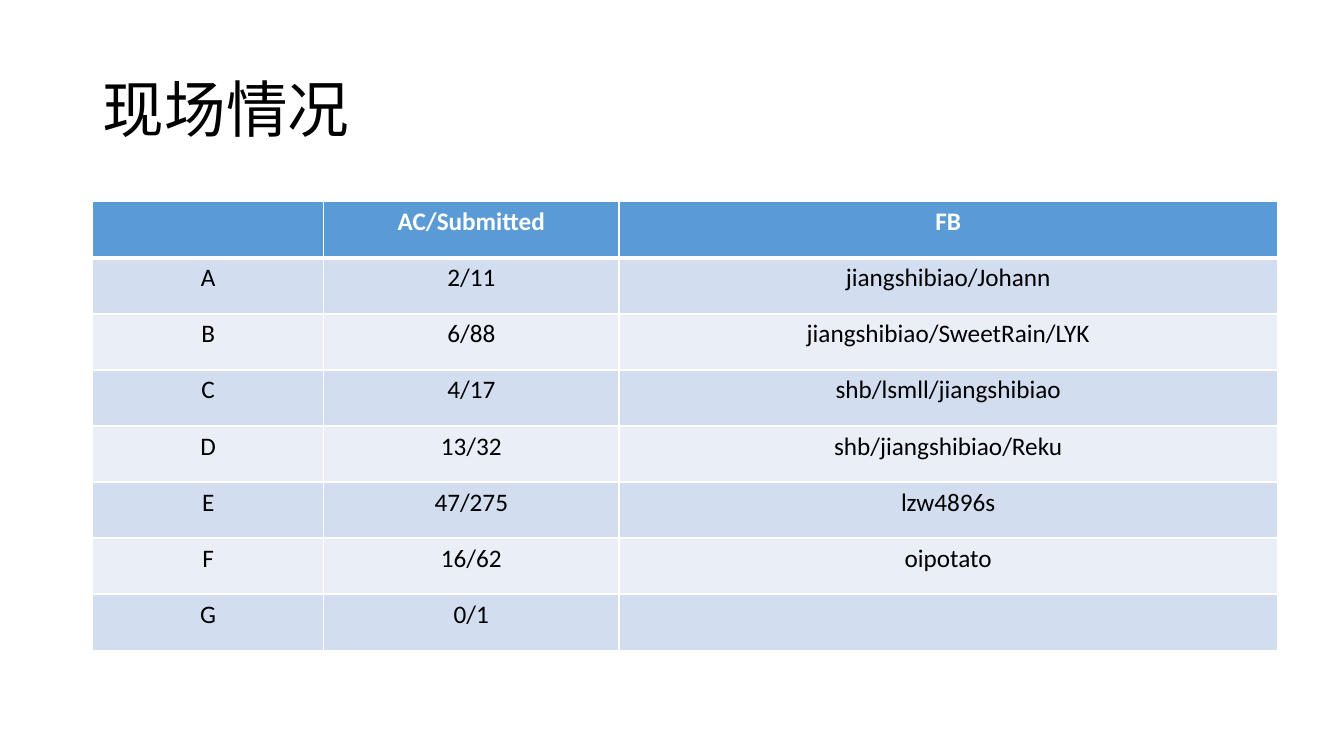
from pptx import Presentation
from pptx.dml.color import RGBColor
from pptx.enum.text import MSO_ANCHOR, PP_ALIGN
from pptx.oxml.ns import qn
from pptx.util import Inches, Pt
from lxml import etree

LEFT, CENTER = PP_ALIGN.LEFT, PP_ALIGN.CENTER
MIDDLE = MSO_ANCHOR.MIDDLE

BLACK = RGBColor(0x00, 0x00, 0x00)
WHITE = RGBColor(0xFF, 0xFF, 0xFF)
HEADER_BLUE = RGBColor(0x5B, 0x9B, 0xD5)
BAND_DARK = RGBColor(0xD2, 0xDE, 0xEF)
BAND_LIGHT = RGBColor(0xEA, 0xEF, 0xF7)

WIDTH, HEIGHT = Inches(13.33), Inches(7.5)
LEFT_MARGIN = 0.069  # share of the slide's width

RESULTS = [
    ("", "AC/Submitted", "FB"),
    ("A", "2/11", "jiangshibiao/Johann"),
    ("B", "6/88", "jiangshibiao/SweetRain/LYK"),
    ("C", "4/17", "shb/lsmll/jiangshibiao"),
    ("D", "13/32", "shb/jiangshibiao/Reku"),
    ("E", "47/275", "lzw4896s"),
    ("F", "16/62", "oipotato"),
    ("G", "0/1", ""),
]
COLUMN_WIDTHS = (2.29, 2.93, 6.53)
ROW_HEIGHT = 0.556


class SlideBuilder:
    """Holds the style and the current slide; places parts by shares of the slide."""

    font_name = "Calibri"

    def __init__(self, deck):
        self.page = deck.slides.add_slide(deck.slide_layouts[5])

    def style(self, para, size, color, align, bold=False):
        para.alignment = align
        font = para.font
        font.name, font.size, font.bold = self.font_name, Pt(size), bold
        font.color.rgb = color

    def title(self, text, left, top, width, height):
        box = self.page.shapes.title
        box.left, box.top = int(WIDTH * left), int(HEIGHT * top)
        box.width, box.height = int(WIDTH * width), int(HEIGHT * height)
        frame = box.text_frame
        frame.text = text
        frame.vertical_anchor = MIDDLE
        para = frame.paragraphs[0]
        para.line_spacing = 0.9
        self.style(para, 44, BLACK, LEFT)

    def border(self, cell, top, bottom):
        """Draw white cell edges; the edges must come before the fill."""
        properties = cell._tc.get_or_add_tcPr()
        edges = {"a:lnL": 1, "a:lnR": 1, "a:lnT": top, "a:lnB": bottom}
        for position, (tag, points) in enumerate(edges.items()):
            line = etree.Element(qn(tag), w=str(Pt(points)))
            fill = etree.SubElement(line, qn("a:solidFill"))
            etree.SubElement(fill, qn("a:srgbClr"), val=str(WHITE))
            properties.insert(position, line)

    def table(self, rows, column_widths, row_height, left, top):
        frame = self.page.shapes.add_table(
            len(rows), len(column_widths), int(WIDTH * left), int(HEIGHT * top),
            Inches(sum(column_widths)), Inches(row_height * len(rows)))
        grid = frame.table
        for column, width in zip(grid.columns, column_widths):
            column.width = Inches(width)
        for index, values in enumerate(rows):
            is_header = index == 0
            band = BAND_DARK if index % 2 else BAND_LIGHT
            for cell, value in zip(grid.rows[index].cells, values):
                cell.text = value
                cell.fill.solid()
                cell.fill.fore_color.rgb = HEADER_BLUE if is_header else band
                self.border(cell, top=3 if index == 1 else 1, bottom=3 if is_header else 1)
                self.style(cell.text_frame.paragraphs[0], 18,
                           WHITE if is_header else BLACK, CENTER, bold=is_header)


def main():
    deck = Presentation()
    deck.slide_width, deck.slide_height = WIDTH, HEIGHT
    slide = SlideBuilder(deck)

    # Heading
    slide.title("现场情况", LEFT_MARGIN, 0.053, 0.863, 0.193)

    # Results per problem
    slide.table(RESULTS, COLUMN_WIDTHS, ROW_HEIGHT, LEFT_MARGIN, 0.267)

    deck.save("out.pptx")


if __name__ == "__main__":
    main()
